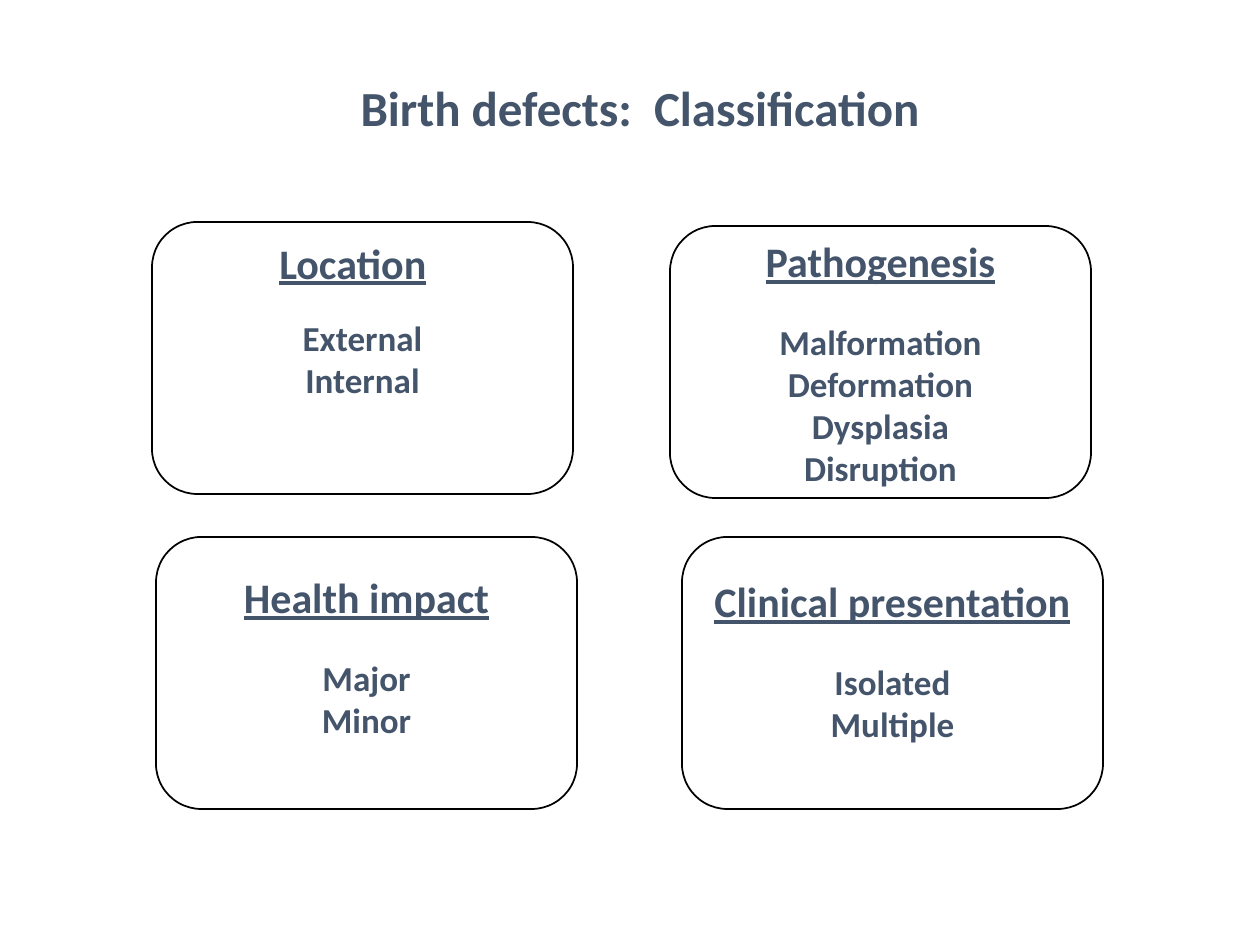
import pptx
import pptx.util
import pptx.dml.color
import pptx.enum.shapes
import pptx.enum.text

PX = 914400 / 126  # EMU per px
INK = "44546A"
CENTER = pptx.enum.text.PP_ALIGN.CENTER
LEFT = pptx.enum.text.PP_ALIGN.LEFT
MIDDLE = pptx.enum.text.MSO_ANCHOR.MIDDLE


def color(value):
    return pptx.dml.color.RGBColor.from_string(value)


def write(paragraph, text, size=20, underline=False, align=CENTER, before=0, spacing=1.0):
    paragraph.text = text
    paragraph.alignment = align
    paragraph.line_spacing = spacing
    if before:
        paragraph.space_before = pptx.util.Pt(before)
    font = paragraph.runs[0].font
    font.name = "Calibri"
    font.size = pptx.util.Pt(size)
    font.bold = True
    font.underline = underline
    font.color.rgb = color(INK)


presentation = pptx.Presentation()
presentation.slide_width = round(1260 * PX)
presentation.slide_height = round(945 * PX)
slide = presentation.slides.add_slide(presentation.slide_layouts[5])

# Title
title = slide.shapes.title
title.left, title.top, title.width, title.height = [round(v * PX) for v in (73, 53, 1134, 116)]
title.text_frame.vertical_anchor = MIDDLE
write(title.text_frame.paragraphs[0], "Birth defects:  Classification", size=28, spacing=0.9)

# Classification cards: left, top, bottom inset, heading, classes
cards = [
    (152, 222, 6, None, ["External", "Internal"]),
    (682, 537, 32, "Clinical presentation", ["Isolated", "Multiple"]),
    (156, 537, 40, "Health impact", ["Major", "Minor"]),
    (670, 226, 6, "Pathogenesis", ["Malformation", "Deformation", "Dysplasia", "Disruption"]),
]
for left, top, bottom_inset, heading, classes in cards:
    card = slide.shapes.add_shape(
        pptx.enum.shapes.MSO_SHAPE.ROUNDED_RECTANGLE,
        *[round(v * PX) for v in (left, top, 421, 272)])
    card.shadow.inherit = False
    card.fill.solid()
    card.fill.fore_color.rgb = color("FFFFFF")
    card.line.color.rgb = color("000000")
    card.line.width = pptx.util.Pt(1)
    frame = card.text_frame
    frame.word_wrap = True
    frame.vertical_anchor = MIDDLE
    frame.margin_bottom = round(bottom_inset * PX)
    paragraph = frame.paragraphs[0]
    if heading:
        write(paragraph, heading, size=24, underline=True)
    for index, name in enumerate(classes):
        if heading or index:
            paragraph = frame.add_paragraph()
        write(paragraph, name, before=19.5 if heading and index == 0 else 0)

# Heading of the location card
location = slide.shapes.add_textbox(*[round(v * PX) for v in (267, 231, 175, 63)])
location.text_frame.word_wrap = False
location.text_frame.auto_size = pptx.enum.text.MSO_AUTO_SIZE.SHAPE_TO_FIT_TEXT
write(location.text_frame.paragraphs[0], "Location", size=24, underline=True, align=LEFT)

presentation.save("out.pptx")
